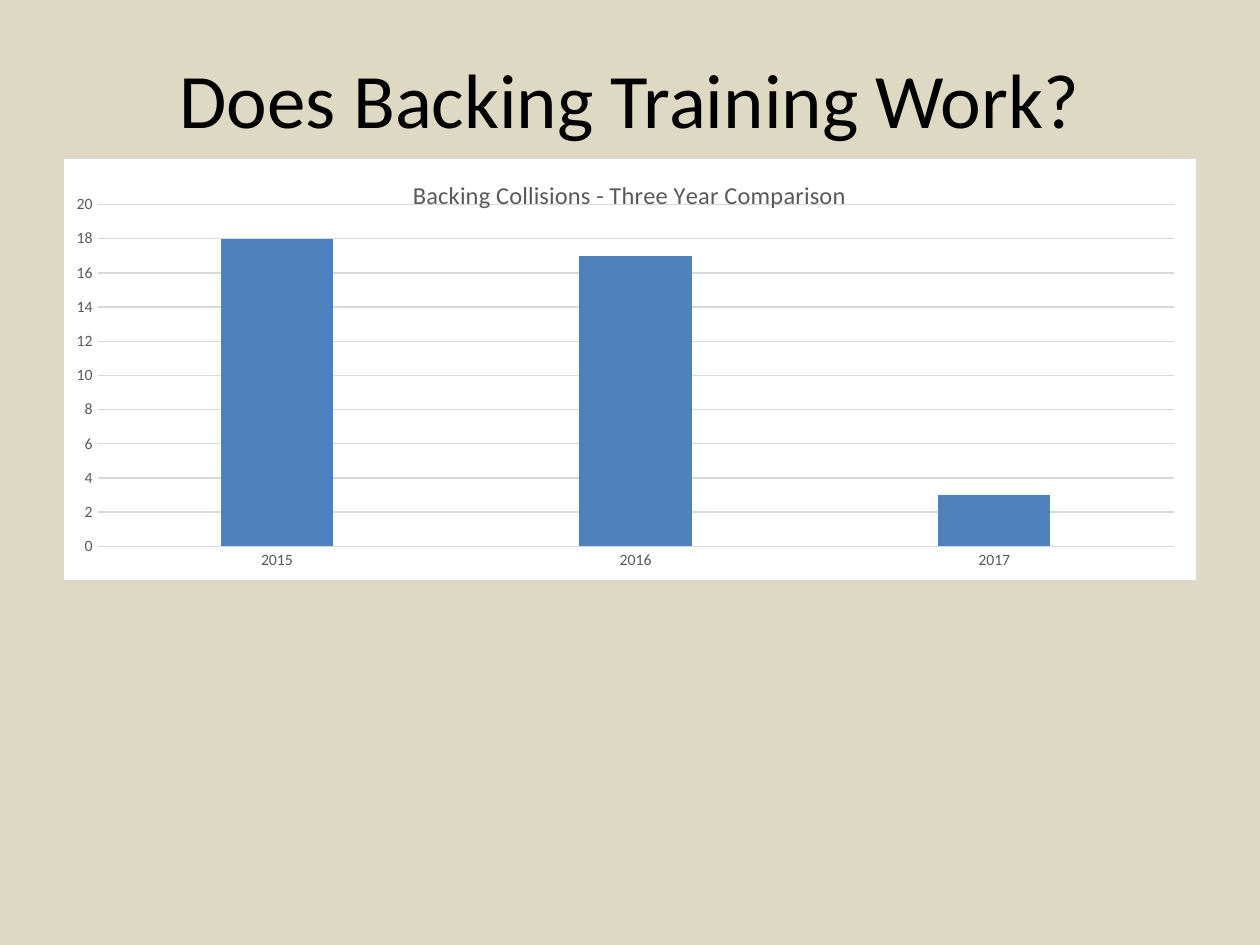
"""Build a slide comparing backing collisions over three years."""
from typing import NamedTuple

from pptx import Presentation
from pptx import util as u
from pptx.chart import data as cd
from pptx.dml import color as dc
from pptx.dml import line as dl
from pptx.enum import chart as ec, text as et
from pptx.oxml import parse_xml
from pptx.oxml.ns import nsdecls
from pptx.text import text as tt

FONT = "Calibri"
HUES = {"back": "DDD9C3", "ink": "000000", "gray": "595959",
        "rule": "D9D9D9", "bar": "4F81BD", "card": "FFFFFF"}


class Box(NamedTuple):
    """Place and size in points."""
    x: float
    y: float
    w: float
    h: float

    def emu(self) -> list:
        """Return the four lengths."""
        return [u.Pt(n) for n in self]


HEAD = Box(49.68, 21.6, 620.64, 68.4)
CARD = Box(36, 90, 648, 241.92)
PLOT = Box(0.03, 0.11, 0.95, 0.81)


def hue(name: str) -> dc.RGBColor:
    """Look up a colour."""
    return dc.RGBColor.from_string(HUES[name])


def style(font: tt.Font, size: float, name: str) -> None:
    """Set the face, size and colour of a font."""
    font.name, font.size, font.bold = FONT, u.Pt(size), False
    font.color.rgb = hue(name)


def rule(line: dl.LineFormat) -> None:
    """Make a line thin and light."""
    line.color.rgb = hue("rule")
    line.width = u.Pt(0.75)


def frame(chart) -> None:
    """Give the chart a bordered card and a fixed inner plot area."""
    card = parse_xml(
        f'<c:spPr {nsdecls("c", "a")}><a:solidFill><a:srgbClr val="{HUES["card"]}"/>'
        f'</a:solidFill><a:ln w="{u.Pt(0.75)}"><a:solidFill>'
        f'<a:srgbClr val="{HUES["rule"]}"/></a:solidFill></a:ln></c:spPr>')
    root = chart.element
    root.find("{*}chart").addnext(card)
    area = root.find(".//{*}plotArea")
    for old in area.findall("{*}layout"):
        area.remove(old)
    spots = "".join(f'<c:{tag} val="{val}"/>' for tag, val in zip("xywh", PLOT))
    area.insert(0, parse_xml(
        f'<c:layout {nsdecls("c")}><c:manualLayout><c:layoutTarget val="inner"/>'
        f'<c:xMode val="edge"/><c:yMode val="edge"/>{spots}</c:manualLayout></c:layout>'))


def draw(slide) -> None:
    """Add the column chart."""
    data = cd.CategoryChartData()
    data.categories = ["2015", "2016", "2017"]
    data.add_series("Series 1", (18, 17, 3))
    chart = slide.shapes.add_chart(
        ec.XL_CHART_TYPE.COLUMN_CLUSTERED, *CARD.emu(), data).chart
    style(chart.font, 10, "ink")
    chart.has_legend = False
    chart.has_title = True
    title = chart.chart_title
    title.include_in_layout = False
    para = title.text_frame.paragraphs[0]
    para.text = "Backing Collisions - Three Year Comparison"
    style(para.runs[0].font, 14, "gray")
    plot = chart.plots[0]
    plot.gap_width, plot.overlap, plot.vary_by_categories = 219, -27, False
    fill = plot.series[0].format.fill
    fill.solid()
    fill.fore_color.rgb = hue("bar")
    cat, val = chart.category_axis, chart.value_axis
    for axis in (cat, val):
        axis.major_tick_mark = axis.minor_tick_mark = ec.XL_TICK_MARK.NONE
        style(axis.tick_labels.font, 9, "gray")
    rule(cat.format.line)
    val.format.line.fill.background()
    val.minimum_scale, val.maximum_scale, val.major_unit = 0, 20, 2
    val.has_major_gridlines = True
    rule(val.major_gridlines.format.line)
    frame(chart)


def main() -> None:
    """Build and save the slide."""
    deck = Presentation()
    deck.slide_width, deck.slide_height = u.Pt(720), u.Pt(540)
    slide = deck.slides.add_slide(deck.slide_layouts[5])
    slide.background.fill.solid()
    slide.background.fill.fore_color.rgb = hue("back")
    head = slide.shapes.title
    head.left, head.top, head.width, head.height = HEAD.emu()
    body = head.text_frame
    body.text = "Does Backing Training Work?"
    body.vertical_anchor = et.MSO_ANCHOR.MIDDLE
    para = body.paragraphs[0]
    para.alignment = et.PP_ALIGN.CENTER
    style(para.runs[0].font, 44, "ink")
    draw(slide)
    deck.save("out.pptx")


if __name__ == "__main__":
    main()
